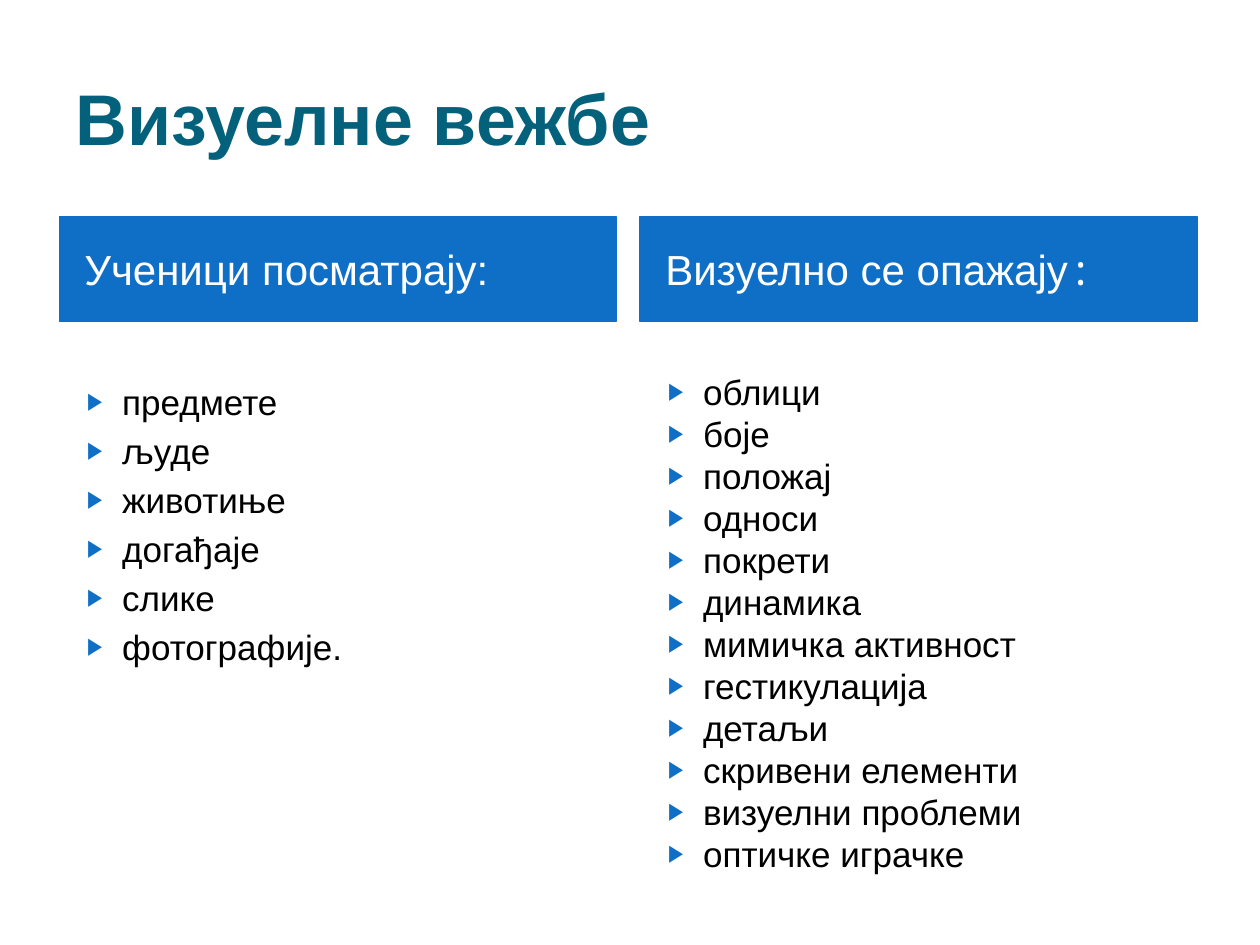
"""Build a slide comparing what pupils watch with what they perceive."""
from lxml import etree
from pptx import Presentation
from pptx.dml.color import RGBColor
from pptx.enum.text import MSO_ANCHOR, MSO_AUTO_SIZE, PP_ALIGN
from pptx.oxml.ns import qn
from pptx.util import Pt

LEFT = PP_ALIGN.LEFT
TOP = MSO_ANCHOR.TOP
MIDDLE = MSO_ANCHOR.MIDDLE
NO_FIT = MSO_AUTO_SIZE.NONE

COMPARISON_LAYOUT = 4
COLUMN_LEFTS = (33.84, 365.76)
COLUMN_WIDTH = 318.24

WATCHED = ["предмете", "људе", "животиње", "догађаје", "слике", "фотографије."]
PERCEIVED = [
    "облици", "боје", "положај", "односи", "покрети", "динамика",
    "мимичка активност", "гестикулација", "детаљи", "скривени елементи",
    "визуелни проблеми", "оптичке играчке",
]


def color(value):
    return RGBColor.from_string(value)


def add_text(para, text, size=20, ink="000000", bold=False, font="Arial"):
    span = para.add_run()
    span.text = text
    span.font.name = font
    span.font.size = Pt(size)
    span.font.bold = bold
    span.font.color.rgb = color(ink)


def add_bullet(para, ink):
    props = para._p.get_or_add_pPr()
    props.set("marL", str(Pt(28.8)))
    props.set("indent", str(-Pt(20.16)))
    tint = etree.SubElement(props, qn("a:buClr"))
    etree.SubElement(tint, qn("a:srgbClr"), val=ink)
    etree.SubElement(props, qn("a:buSzPct"), val="68000")
    etree.SubElement(props, qn("a:buChar"), char="▶")


class SlideBuilder:
    """Hold the style and the current page."""

    accent = "0F6FC6"
    title_ink = "04617B"

    def __init__(self, deck):
        self.page = deck.slides.add_slide(deck.slide_layouts[COMPARISON_LAYOUT])

    def place(self, index, left, top, width, height, anchor):
        box = self.page.placeholders[index]
        box.left, box.top = Pt(left), Pt(top)
        box.width, box.height = Pt(width), Pt(height)
        frame = box.text_frame
        frame.auto_size = NO_FIT
        frame.word_wrap = True
        frame.vertical_anchor = anchor
        return box

    def title(self, text):
        box = self.place(0, 36, 21.6, 648, 90, MIDDLE)
        para = box.text_frame.paragraphs[0]
        para.alignment = LEFT
        add_text(para, text, size=41, ink=self.title_ink, bold=True)

    def header(self, index, left, *parts):
        box = self.place(index, left, 123.84, COLUMN_WIDTH, 59.76, MIDDLE)
        box.fill.solid()
        box.fill.fore_color.rgb = color(self.accent)
        box.line.color.rgb = color(self.accent)
        box.line.width = Pt(0.75)
        box.text_frame.margin_left = Pt(14.4)
        para = box.text_frame.paragraphs[0]
        para.space_before = Pt(0)
        for text, font in parts:
            add_text(para, text, size=24, ink="FFFFFF", font=font)

    def bullets(self, index, left, top, height, items, gap=0):
        box = self.place(index, left, top, COLUMN_WIDTH, height, TOP)
        frame = box.text_frame
        for number, item in enumerate(items):
            para = frame.add_paragraph() if number else frame.paragraphs[0]
            add_bullet(para, self.accent)
            para.space_before = Pt(gap if number else 0)
            add_text(para, item)


def main():
    deck = Presentation()
    deck.slide_width, deck.slide_height = Pt(720), Pt(540)
    builder = SlideBuilder(deck)
    first, second = COLUMN_LEFTS
    builder.title("Визуелне вежбе")
    builder.header(1, first, ("Ученици посматрају:", "Arial"))
    builder.header(3, second, ("Визуелно се опажају", "Arial"), (":", "Noto Sans Mono"))
    builder.bullets(2, first, 213.84, 234.72, WATCHED, gap=4)
    builder.bullets(4, second, 208.08, 310.32, PERCEIVED)
    deck.save("out.pptx")


if __name__ == "__main__":
    main()
